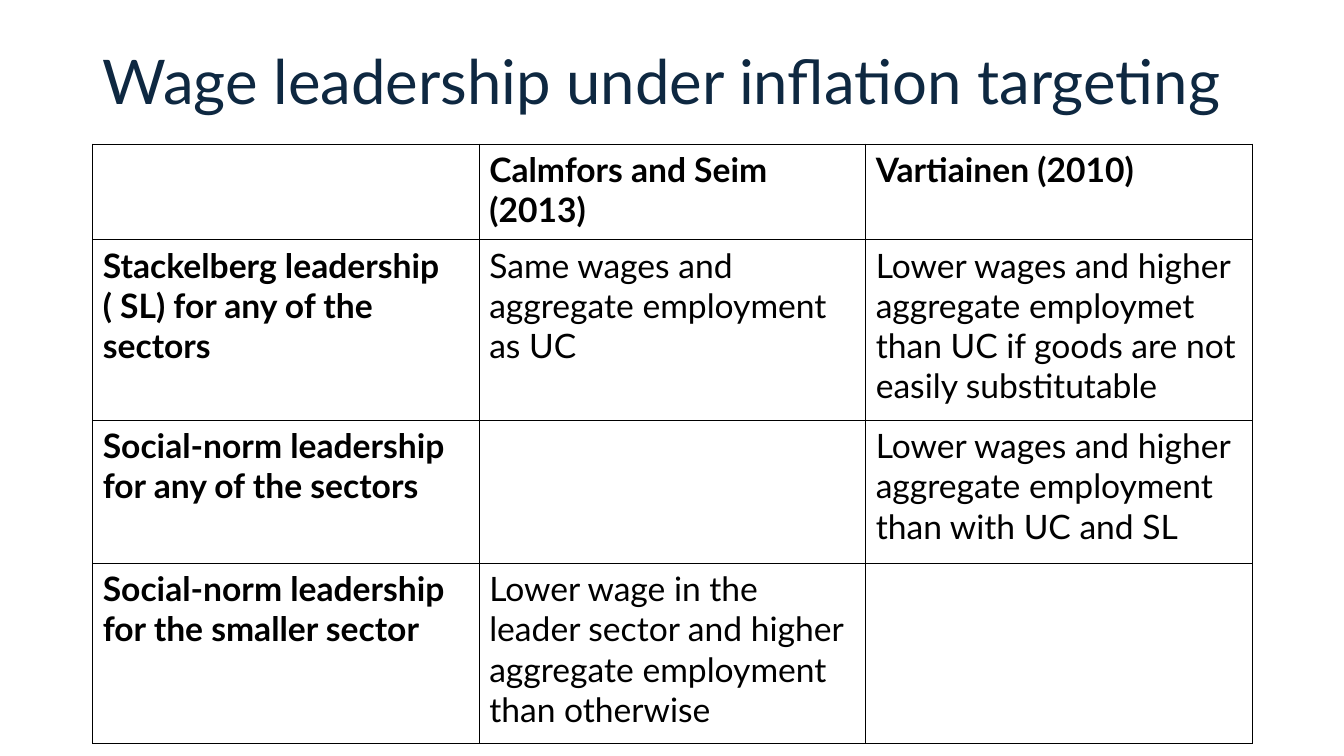
from lxml import etree
from pptx import Presentation, util as u
from pptx.dml.color import RGBColor
from pptx.enum import text
from pptx.oxml import ns

NAVY = RGBColor(0x0E, 0x28, 0x41)
BLACK = RGBColor(0, 0, 0)
FONT = "Lato"

deck = Presentation()
deck.slide_width = u.Inches(13.33)
deck.slide_height = u.Inches(7.5)
slide = deck.slides.add_slide(deck.slide_layouts[6])
left, width = u.Inches(0.92), u.Inches(11.5)


def style(para, size, color, bold=False):
    para.font.name = FONT
    para.font.size = u.Pt(size)
    para.font.color.rgb = color
    para.font.bold = bold


def border(cell):
    props = cell._tc.get_or_add_tcPr()
    for side in ("lnL", "lnR", "lnT", "lnB"):
        line = etree.SubElement(props, ns.qn("a:" + side), w=str(u.Pt(1)))
        fill = etree.SubElement(line, ns.qn("a:solidFill"))
        etree.SubElement(fill, ns.qn("a:srgbClr"), val=str(BLACK))


title = slide.shapes.add_textbox(left, u.Inches(0.4), width, u.Inches(0.87))
frame = title.text_frame
frame.word_wrap = True
frame.vertical_anchor = text.MSO_ANCHOR.MIDDLE
head = frame.paragraphs[0]
head.text = "Wage leadership under inflation targeting"
head.line_spacing = 0.9
style(head, 44, NAVY)

rows = [
    (0.95, "", "Calmfors and Seim (2013)", "Vartiainen (2010)"),
    (1.79, "Stackelberg leadership ( SL) for any of the sectors",
     "Same wages and aggregate employment as UC",
     "Lower wages and higher aggregate employmet than UC if goods are not easily substitutable"),
    (1.42, "Social-norm leadership for any of the sectors", "",
     "Lower wages and higher aggregate employment than with UC and SL"),
    (1.79, "Social-norm leadership for the smaller sector",
     "Lower wage in the leader sector and higher aggregate employment than otherwise", ""),
]
tall = u.Inches(sum(row[0] for row in rows))
table = slide.shapes.add_table(len(rows), 3, left, u.Inches(1.43), width, tall).table
table.first_row = False
table.horz_banding = False

for r, (height, *words) in enumerate(rows):
    table.rows[r].height = u.Inches(height)
    for c, word in enumerate(words):
        cell = table.cell(r, c)
        border(cell)
        cell.fill.background()
        cell.text = word
        style(cell.text_frame.paragraphs[0], 24, BLACK, r == 0 or c == 0)

deck.save("out.pptx")
